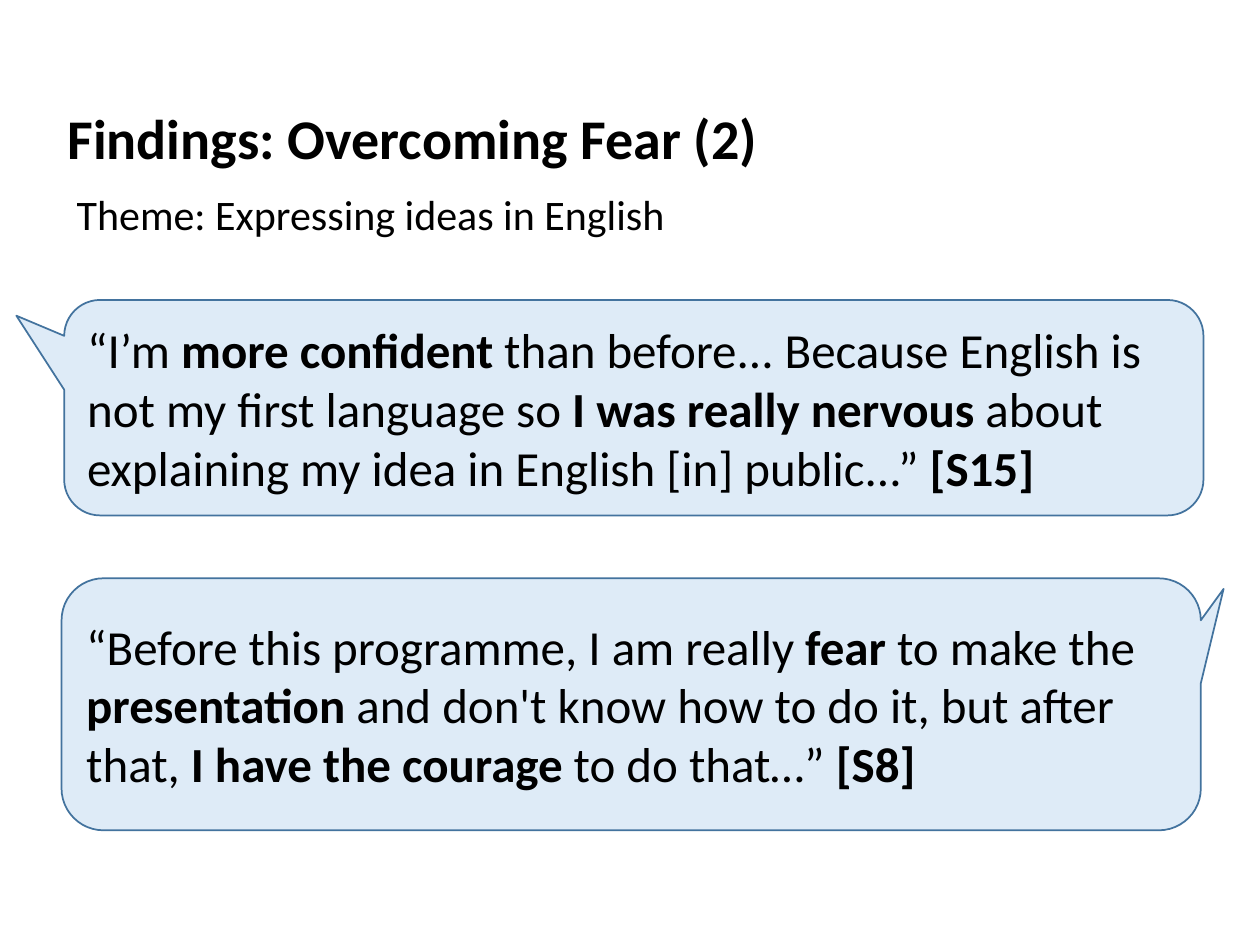
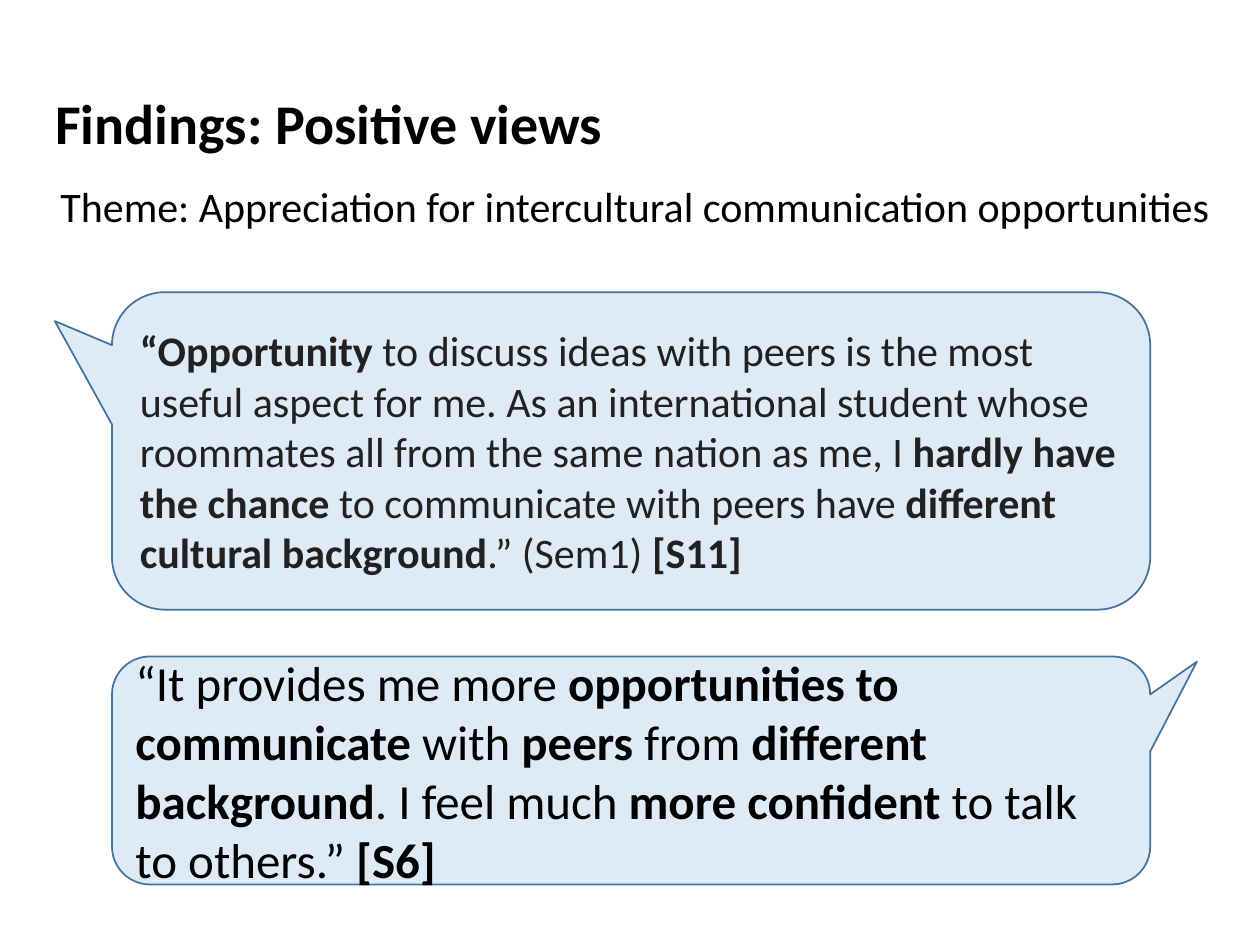
from pptx import Presentation
from pptx.dml.color import RGBColor
from pptx.enum import shapes, text
from pptx.util import Pt

FONT = "Calibri"
BLACK, GREY = "000000", "212121"
BUBBLE_FILL, BUBBLE_LINE = "DEEBF7", "43739E"


def color(value):
    """Turn a hex string into a colour."""
    return RGBColor.from_string(value)


def write(p, marked, size, ink=BLACK):
    """Add runs to a paragraph, bold between pairs of asterisks."""
    for i, part in enumerate(marked.split("**")):
        if part:
            r = p.add_run()
            r.text = part
            r.font.name, r.font.size = FONT, Pt(size)
            r.font.bold = i % 2 == 1
            r.font.color.rgb = color(ink)


def heading(s, box, marked, size, spacing=1.0):
    """Place one line of heading text in the given box."""
    tf = s.shapes.add_textbox(*map(Pt, box)).text_frame
    tf.word_wrap = True
    p = tf.paragraphs[0]
    p.line_spacing = spacing
    write(p, marked, size)


def bubble(s, box, tip, marked, size, ink=BLACK):
    """Place a speech bubble whose tip is relative to its centre."""
    sp = s.shapes.add_shape(shapes.MSO_SHAPE.ROUNDED_RECTANGULAR_CALLOUT, *map(Pt, box))
    sp.shadow.inherit = False
    sp.adjustments[0], sp.adjustments[1] = tip
    sp.fill.solid()
    sp.fill.fore_color.rgb = color(BUBBLE_FILL)
    sp.line.color.rgb = color(BUBBLE_LINE)
    sp.line.width = Pt(1)
    tf = sp.text_frame
    tf.word_wrap = True
    tf.vertical_anchor = text.MSO_ANCHOR.MIDDLE
    p = tf.paragraphs[0]
    p.alignment = text.PP_ALIGN.LEFT
    write(p, marked, size, ink)


def findings_slide(prs, title, title_at, theme, theme_at, quotes):
    """Build a slide with a title, a theme line and quoted bubbles."""
    s = prs.slides.add_slide(prs.slide_layouts[6])
    heading(s, (*title_at, 537, 66), f"**{title}**", 32)
    heading(s, (*theme_at, 672, 40), theme, 24, 0.9)
    for quote in quotes:
        bubble(s, *quote)


def main():
    """Build and save the presentation."""
    prs = Presentation()
    prs.slide_width, prs.slide_height = Pt(720), Pt(540)
    findings_slide(
        prs,
        "Findings: Overcoming Fear (2)", (31.5, 55.7),
        "Theme: Expressing ideas in English", (36.7, 107.2),
        [
            ((36.7, 171.4, 651, 123.1), (-0.542, -0.427),
             "“I’m **more confident **than before... Because English is not my first "
             "language so **I was really nervous **about explaining my idea in English "
             "[in] public...” **[S15]**", 28),
            ((35.2, 330.5, 651, 144), (0.52, -0.458),
             "“Before this programme, I am really **fear** to make the **presentation** "
             "and don't know how to do it, but after that, **I have the courage **to do "
             "that…” **[S8]**", 28),
        ])
    findings_slide(
        prs,
        "Findings: Positive views", (24.5, 47.1),
        "Theme: Appreciation for intercultural communication opportunities", (27.4, 102.9),
        [
            ((64, 167, 593.3, 181.4), (-0.555, -0.409),
             "**“Opportunity **to discuss ideas with peers is the most useful aspect for "
             "me. As an international student whose roommates all from the same nation as "
             "me, I **hardly have the chance **to communicate with peers have **different "
             "cultural background**.” (Sem1) **[S11]**", 24, GREY),
            ((64, 375.1, 593.3, 130.3), (0.545, -0.477),
             "“It provides me more **opportunities to communicate **with **peers** from "
             "**different background**. I feel much **more confident** to talk to "
             "others.” **[S6]**", 28),
        ])
    prs.save("out.pptx")


if __name__ == "__main__":
    main()
